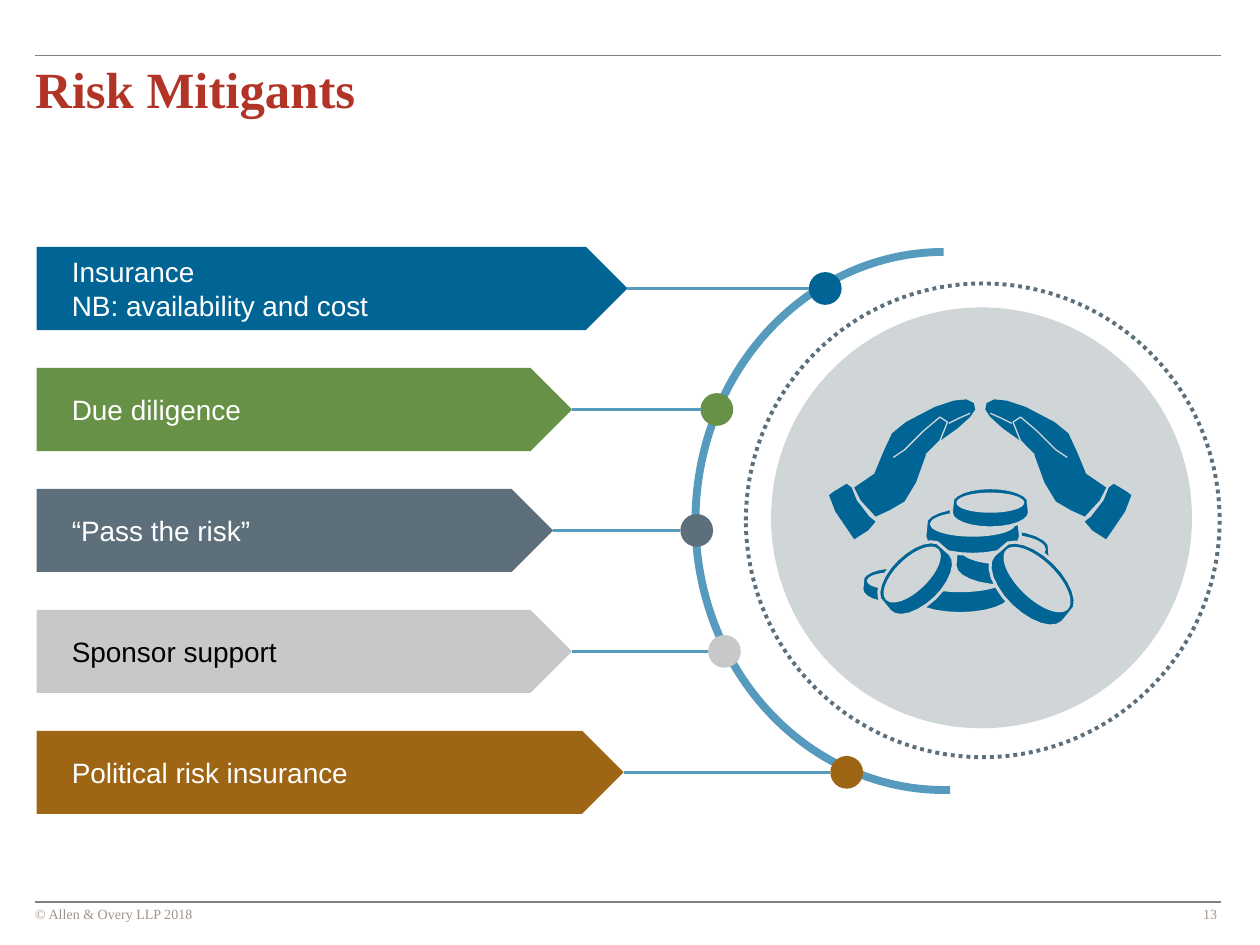
"""Build the Risk Mitigants slide: five banners wired to an arc around an icon."""
from math import cos, pi, radians, sin

from lxml.etree import SubElement
from pptx import Presentation
from pptx.dml.color import RGBColor
from pptx.enum.dml import MSO_LINE
from pptx.enum.shapes import MSO_CONNECTOR, MSO_SHAPE as SHAPE
from pptx.enum.text import MSO_ANCHOR as ANCHOR, PP_ALIGN as ALIGN
from pptx.oxml.ns import qn
from pptx.util import Inches, Pt

BLUE = RGBColor(0x00, 0x65, 0x95)
GREEN = RGBColor(0x67, 0x91, 0x46)
SLATE = RGBColor(0x5C, 0x6F, 0x7B)
SILVER = RGBColor(0xC7, 0xC8, 0xCA)
BROWN = RGBColor(0x9E, 0x66, 0x14)
SKY = RGBColor(0x56, 0x9B, 0xBE)
PALE = RGBColor(0xD0, 0xD5, 0xD8)
GREY = RGBColor(0x80, 0x80, 0x80)
TAUPE = RGBColor(0xA1, 0x95, 0x89)
RED = RGBColor(0xB2, 0x34, 0x27)
WHITE = RGBColor(0xFF, 0xFF, 0xFF)
BLACK = RGBColor(0x00, 0x00, 0x00)
SERIF, SANS = "Times New Roman", "Arial"

prs = Presentation()
prs.slide_width, prs.slide_height = Inches(10), Inches(7.5)
COL = prs.slide_width // 10
slide = prs.slides.add_slide(prs.slide_layouts[6])
shapes = slide.shapes


def write(tf, text, size=16, font=SANS, color=WHITE, bold=False,
          align=ALIGN.LEFT, anchor=ANCHOR.TOP, insets=(0, 0, 0, 0)):
    tf.word_wrap = True
    tf.vertical_anchor = anchor
    tf.margin_left, tf.margin_top, tf.margin_right, tf.margin_bottom = (
        int(inset * COL) for inset in insets)
    for i, line in enumerate(text.split("\n")):
        p = tf.paragraphs[0] if i == 0 else tf.add_paragraph()
        p.alignment = align
        r = p.add_run()
        r.text = line
        r.font.size, r.font.name, r.font.bold = Pt(size), font, bold
        r.font.color.rgb = color


def paint(s, fill=None, line=None, weight=1):
    s.shadow.inherit = False
    if fill is None:
        s.fill.background()
    else:
        s.fill.solid()
        s.fill.fore_color.rgb = fill
    if line is None:
        s.line.fill.background()
    else:
        s.line.color.rgb = line
        s.line.width = Pt(weight)
    return s


LEFT, RIGHT = 0.28, 9.69
small = dict(size=8, font=SERIF, color=TAUPE)
for box, text, fmt in [
    ((LEFT, 7.19, 7.17, 0.13), "© Allen & Overy LLP 2018", small),
    ((9.19, 7.19, 0.47, 0.13), "13", dict(small, align=ALIGN.RIGHT)),
    ((LEFT, 0.46, 9.37, 0.49), "Risk Mitigants",
     dict(size=29, font=SERIF, color=RED, bold=True)),
]:
    s = shapes.add_textbox(*(int(v * COL) for v in box))
    write(s.text_frame, text, **fmt)

for kind, box, style in [
    (SHAPE.OVAL, (5.92, 2.25, 3.76, 3.76), dict(line=SLATE, weight=2.25)),
    (SHAPE.OVAL, (6.12, 2.44, 3.34, 3.34), dict(fill=PALE)),
    (SHAPE.ARC, (5.52, 2, 3.94, 4.27), dict(line=SKY, weight=4.5)),
]:
    s = paint(shapes.add_shape(kind, *(int(v * COL) for v in box)), **style)
    if style.get("line") == SLATE:
        s.line.dash_style = MSO_LINE.ROUND_DOT
    if kind == SHAPE.ARC:
        s.adjustments[0], s.adjustments[1] = 162, 54.826
        s.element.spPr.get_or_add_xfrm().set("flipH", "1")

TOP, ROW, BAR, DOT, BAR_LEFT = 1.96, 0.96, 0.66, 0.26, 0.29
rules = [(LEFT, RIGHT, 0.44, GREY, 1), (LEFT, RIGHT, 7.16, GREY, 1)]
for i, (text, width, dot_x, fill, color) in enumerate([
    ("Insurance\nNB: availability and cost", 4.69, 6.42, BLUE, WHITE),
    ("Due diligence", 4.25, 5.56, GREEN, WHITE),
    ("“Pass the risk”", 4.1, 5.4, SLATE, WHITE),
    ("Sponsor support", 4.25, 5.62, SILVER, BLACK),
    ("Political risk insurance", 4.66, 6.59, BROWN, WHITE),
]):
    y = TOP + i * ROW
    middle = y + BAR / 2
    for kind, box in [
        (SHAPE.OVAL, (dot_x, middle - DOT / 2, DOT, DOT)),
        (SHAPE.PENTAGON, (BAR_LEFT, y, width, BAR)),
    ]:
        s = paint(shapes.add_shape(kind, *(int(v * COL) for v in box)), fill)
    write(s.text_frame, text, color=color, anchor=ANCHOR.MIDDLE,
          insets=(0.28, 0.05, 0.1, 0.05))
    rules.append((dot_x, BAR_LEFT + width, middle, SKY, 1.5))

for x1, x2, y, color, weight in rules:
    c = shapes.add_connector(MSO_CONNECTOR.STRAIGHT, *(int(v * COL) for v in (x1, y, x2, y)))
    c.line.color.rgb, c.line.width = color, Pt(weight)
    SubElement(c.element.spPr, qn("a:effectLst"))

HAND = [(7.73, 3.2), (7.67, 3.17), (7.57, 3.18), (7.42, 3.23), (7.19, 3.35),
        (7.08, 3.44), (7.01, 3.59), (6.94, 3.76), (6.78, 3.87), (6.83, 3.97),
        (6.95, 4.1), (7.06, 4.05), (7.18, 3.98), (7.27, 3.83), (7.35, 3.61),
        (7.46, 3.5), (7.6, 3.4), (7.7, 3.31), (7.74, 3.25)]
CUFF = [(6.72, 3.84), (6.62, 3.9), (6.58, 3.93), (6.63, 4.06), (6.78, 4.28),
        (6.89, 4.21), (6.95, 4.14), (6.9, 4.1), (6.8, 3.97), (6.76, 3.87)]
THUMB = [(7.09, 3.63), (7.18, 3.57), (7.33, 3.42), (7.46, 3.31), (7.52, 3.35),
         (7.46, 3.5), (7.35, 3.61)]
FINGER = [(7.53, 3.36), (7.61, 3.32), (7.7, 3.28)]
AXIS, FINE, STEPS, RIM = 7.78, 1000, 12, 0.04

outlines = []
for points, fill, line in [(HAND, BLUE, None), (CUFF, BLUE, None),
                           (THUMB, None, PALE), (FINGER, None, PALE)]:
    outlines.append((points, fill, line, None))
    outlines.append(([(2 * AXIS - x, y) for x, y in points], fill, line, None))

for cx, cy, rx, ry, depth, tilt in [
    (7.62, 4.6, 0.4, 0.14, 0.13, 0),
    (7.1, 4.61, 0.26, 0.11, 0.07, 0),
    (7.96, 4.36, 0.38, 0.16, 0.13, 0),
    (7.72, 4.16, 0.38, 0.14, 0.1, 0),
    (7.86, 3.99, 0.31, 0.12, 0.08, 0),
    (7.24, 4.56, 0.33, 0.17, 0.09, -44),
    (8.23, 4.6, 0.38, 0.19, 0.1, 44),
]:
    turn = radians(tilt)
    edge = []
    for k in range(2 * STEPS):
        angle = pi * k / STEPS
        u, v = rx * cos(angle), ry * sin(angle) + (depth if k <= STEPS else 0)
        edge.append((cx + u * cos(turn) - v * sin(turn),
                     cy + u * sin(turn) + v * cos(turn)))
    w, h = 2 * (rx - RIM), 2 * (ry - RIM)
    outlines.append((edge, BLUE, PALE, (cx - w / 2, cy - h / 2, w, h, tilt)))

for points, fill, line, face in outlines:
    grid = [(x * FINE, y * FINE) for x, y in points]
    builder = shapes.build_freeform(*grid[0], scale=COL / FINE)
    builder.add_line_segments(grid[1:], close=fill is not None)
    paint(builder.convert_to_shape(), fill, line, 1.75 if face else 0.75)
    if face:
        s = shapes.add_shape(SHAPE.OVAL, *(int(v * COL) for v in face[:4]))
        paint(s, PALE).rotation = face[4]

prs.save("out.pptx")
